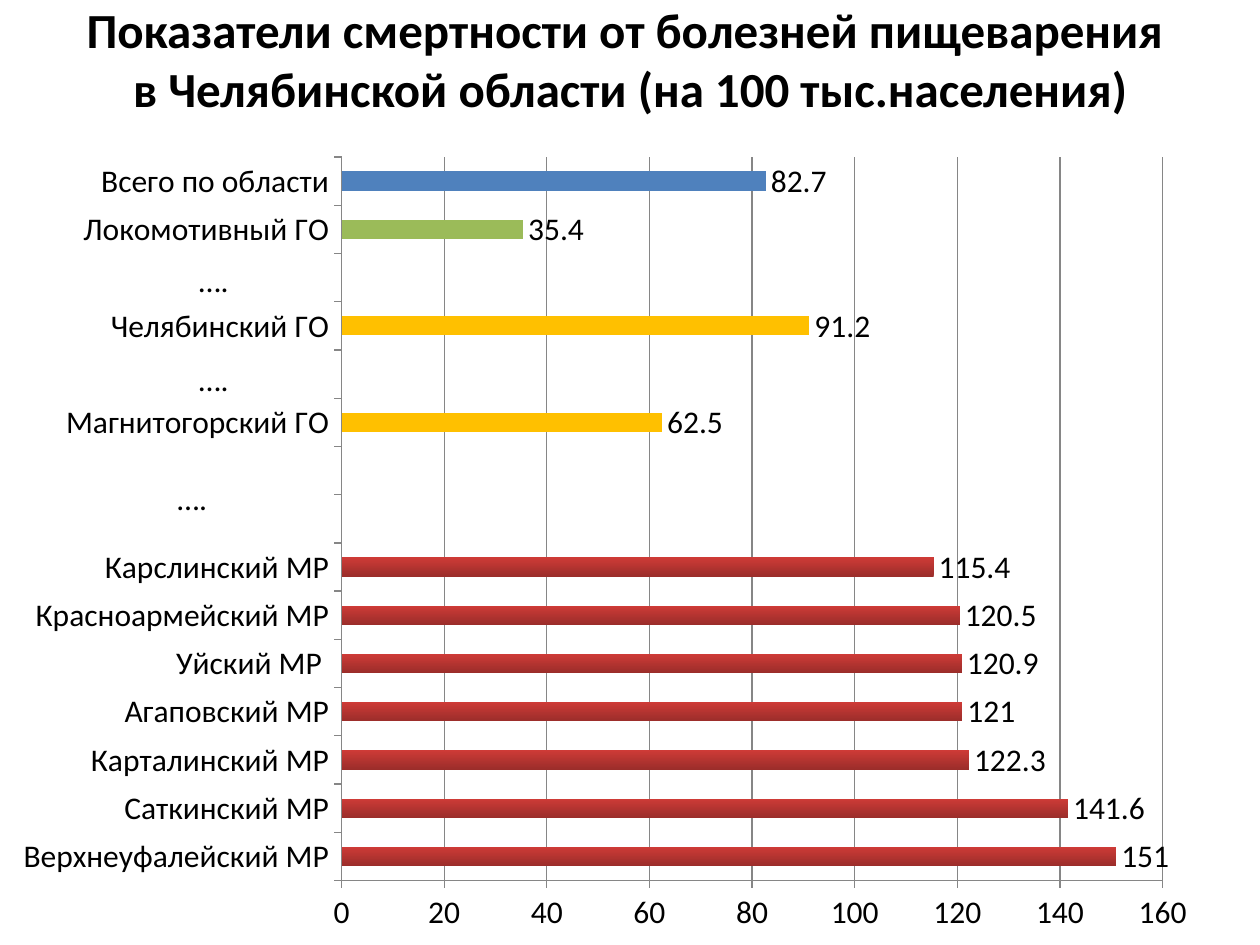
from dataclasses import dataclass

import pptx
import pptx.chart.data
import pptx.dml.color
import pptx.enum.chart
import pptx.enum.text
import pptx.oxml
import pptx.oxml.ns
import pptx.util
from pptx.util import Pt


def rgb(value):
    return pptx.dml.color.RGBColor.from_string(value)


@dataclass(frozen=True)
class Theme:
    font: str = "Calibri"
    title_size: float = 28
    body_size: float = 18
    text: str = "000000"
    axis: str = "868686"
    region: str = "4F81BD"
    low: str = "9BBB59"
    city: str = "FFC000"
    high_bottom: str = "9B2D2A"
    high_top: str = "CE3B37"


theme = Theme()


def add_text(page, text, left, top, width, height, size):
    box = page.shapes.add_textbox(Pt(left), Pt(top), Pt(width), Pt(height))
    box.text_frame.word_wrap = True
    para = box.text_frame.paragraphs[0]
    para.text = text
    para.font.name = theme.font
    para.font.size = Pt(size)
    para.font.color.rgb = rgb(theme.text)
    return box


deck = pptx.Presentation()
deck.slide_width, deck.slide_height = Pt(720), Pt(540)
page = deck.slides.add_slide(deck.slide_layouts[6])

# Title
title = add_text(
    page,
    "Показатели смертности от болезней пищеварения  в Челябинской области (на 100 тыс.населения)",
    36, 0, 648, 67, theme.title_size,
)
title.text_frame.vertical_anchor = pptx.enum.text.MSO_ANCHOR.MIDDLE
title.text_frame.paragraphs[0].alignment = pptx.enum.text.PP_ALIGN.CENTER
title.text_frame.paragraphs[0].font.bold = True

# Mortality by district, bottom to top; None keeps the bar's default gradient
rates = [
    ("Верхнеуфалейский МР", 151, None),
    ("Саткинский МР", 141.6, None),
    ("Карталинский МР", 122.3, None),
    ("Агаповский МР", 121, None),
    ("Уйский МР ", 120.9, None),
    ("Красноармейский МР", 120.5, None),
    ("Карслинский МР", 115.4, None),
    ("", None, None),
    ("", None, None),
    ("Магнитогорский ГО", 62.5, theme.city),
    ("", None, None),
    ("Челябинский ГО", 91.2, theme.city),
    ("", None, None),
    ("Локомотивный ГО", 35.4, theme.low),
    ("Всего по области", 82.7, theme.region),
]
data = pptx.chart.data.CategoryChartData()
data.categories = [name for name, rate, color in rates]
data.add_series("Series 1", [rate for name, rate, color in rates])
chart = page.shapes.add_chart(
    pptx.enum.chart.XL_CHART_TYPE.BAR_CLUSTERED,
    Pt(2), Pt(80.6), Pt(690), Pt(459.4), data,
).chart
chart.has_legend = False
chart.has_title = False
chart.font.name = theme.font
chart.font.size = Pt(theme.body_size)
chart.font.color.rgb = rgb(theme.text)

# Fixed plot area, as fractions of the chart
plot_area = chart.plots[0]._element.getparent()
for old_layout in plot_area.findall(pptx.oxml.ns.qn("c:layout")):
    plot_area.remove(old_layout)
plot_area.insert(0, pptx.oxml.parse_xml(
    f'<c:layout {pptx.oxml.ns.nsdecls("c")}><c:manualLayout>'
    '<c:layoutTarget val="inner"/><c:xMode val="edge"/><c:yMode val="edge"/>'
    '<c:x val="0.28"/><c:y val="0.02"/><c:w val="0.68"/><c:h val="0.9"/>'
    '</c:manualLayout></c:layout>'
))

value_axis = chart.value_axis
value_axis.minimum_scale, value_axis.maximum_scale = 0, 160
value_axis.major_unit = 20
value_axis.has_major_gridlines = True
value_axis.major_gridlines.format.line.color.rgb = rgb(theme.axis)
value_axis.major_gridlines.format.line.width = Pt(0.75)
for axis in (value_axis, chart.category_axis):
    axis.major_tick_mark = pptx.enum.chart.XL_TICK_MARK.OUTSIDE
    axis.format.line.color.rgb = rgb(theme.axis)
    axis.format.line.width = Pt(0.75)

plot = chart.plots[0]
plot.vary_by_categories = False
plot.gap_width = 150
plot.has_data_labels = True
plot.data_labels.show_value = True
plot.data_labels.position = pptx.enum.chart.XL_LABEL_POSITION.OUTSIDE_END

bars = plot.series[0]
bars.invert_if_negative = False
fill = bars.format.fill
fill.gradient()
fill.gradient_angle = 90
for stop, color in zip(fill.gradient_stops, (theme.high_bottom, theme.high_top)):
    stop.color.rgb = rgb(color)
for index, (name, rate, color) in enumerate(rates):
    if color:
        point_fill = bars.points[index].format.fill
        point_fill.solid()
        point_fill.fore_color.rgb = rgb(color)

# Dots for the skipped districts
for left, top in ((94.3, 270), (106.6, 202.3), (106.6, 145.4)):
    add_text(page, "….", left, top, 31.7, 28.8, theme.body_size)

deck.save("out.pptx")
